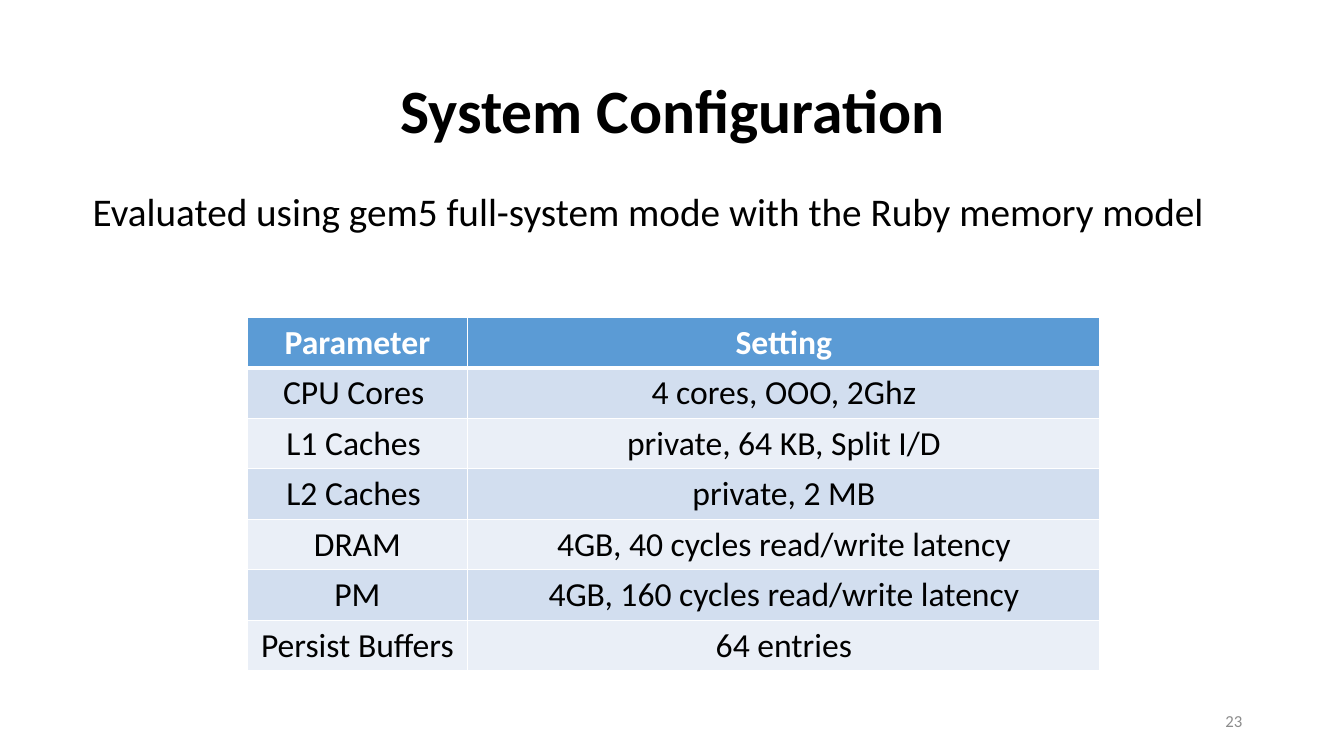
from dataclasses import dataclass

from lxml.etree import SubElement
from pptx import Presentation
from pptx.dml.color import RGBColor
from pptx.enum.text import MSO_ANCHOR, PP_ALIGN
from pptx.oxml.ns import qn
from pptx.util import Inches, Pt


@dataclass(frozen=True)
class Theme:
    font: str = "Calibri"
    ink: str = "000000"
    white: str = "FFFFFF"
    muted: str = "8C8C8C"
    head: str = "5B9BD5"
    bands: tuple = ("D2DEEF", "EAEFF7")
    title: int = 44
    body: int = 28
    table: int = 24
    small: int = 12
    thin: int = 1
    thick: int = 3


@dataclass(frozen=True)
class Box:
    left: float
    top: float
    width: float
    height: float

    def emu(self) -> tuple:
        return tuple(Inches(n) for n in (self.left, self.top, self.width, self.height))


@dataclass(frozen=True)
class Setting:
    name: str
    value: str


THEME = Theme()
HEADER = Setting("Parameter", "Setting")
SETTINGS = [
    Setting("CPU Cores ", "4 cores, OOO, 2Ghz"),
    Setting("L1 Caches ", "private, 64 KB, Split I/D"),
    Setting("L2 Caches ", "private, 2 MB"),
    Setting("DRAM", "4GB, 40 cycles read/write latency"),
    Setting("PM", "4GB, 160 cycles read/write latency"),
    Setting("Persist Buffers", "64 entries"),
]
COLUMNS = (2.19, 6.27)
ROW = 0.5


def write(frame, text: str, *, size: int, color: str = THEME.ink, bold: bool = False,
          align=PP_ALIGN.LEFT, spacing: float = 1.0) -> None:
    para = frame.paragraphs[0]
    para.alignment = align
    para.line_spacing = spacing
    run = para.add_run()
    run.text = text
    font = run.font
    font.name, font.size, font.bold = THEME.font, Pt(size), bold
    font.color.rgb = RGBColor.from_string(color)


def add_text(slide, box: Box, text: str, anchor=MSO_ANCHOR.MIDDLE, **style) -> None:
    frame = slide.shapes.add_textbox(*box.emu()).text_frame
    frame.word_wrap = True
    frame.vertical_anchor = anchor
    write(frame, text, **style)


def set_borders(cell, top: int, bottom: int) -> None:
    """Draw white cell borders; call before the fill so the XML order stays valid."""
    props = cell._tc.get_or_add_tcPr()
    widths = {"lnL": THEME.thin, "lnR": THEME.thin, "lnT": top, "lnB": bottom}
    for tag, width in widths.items():
        line = SubElement(props, qn(f"a:{tag}"), w=str(Pt(width)))
        fill = SubElement(line, qn("a:solidFill"))
        SubElement(fill, qn("a:srgbClr"), val=THEME.white)


def add_settings(slide, left: float, top: float) -> None:
    rows = [HEADER, *SETTINGS]
    box = Box(left, top, sum(COLUMNS), ROW * len(rows))
    table = slide.shapes.add_table(len(rows), len(COLUMNS), *box.emu()).table
    for column, width in zip(table.columns, COLUMNS):
        column.width = Inches(width)
    for i, row in enumerate(rows):
        head = i == 0
        shade = THEME.head if head else THEME.bands[(i - 1) % 2]
        for j, text in enumerate((row.name, row.value)):
            cell = table.cell(i, j)
            set_borders(cell, top=THEME.thick if i == 1 else THEME.thin,
                        bottom=THEME.thick if head else THEME.thin)
            cell.fill.solid()
            cell.fill.fore_color.rgb = RGBColor.from_string(shade)
            write(cell.text_frame, text, size=THEME.table, bold=head,
                  color=THEME.white if head else THEME.ink, align=PP_ALIGN.CENTER)


def main() -> None:
    deck = Presentation()
    deck.slide_width, deck.slide_height = Inches(13.33), Inches(7.5)
    slide = deck.slides.add_slide(deck.slide_layouts[6])
    add_text(slide, Box(0.92, 0.4, 11.5, 1.45), "System Configuration",
             size=THEME.title, bold=True, align=PP_ALIGN.CENTER, spacing=0.9)
    add_text(slide, Box(0.82, 1.86, 11.5, 4.76),
             "Evaluated using gem5 full-system mode with the Ruby memory model",
             anchor=MSO_ANCHOR.TOP, size=THEME.body, spacing=0.9)
    add_text(slide, Box(9.42, 6.95, 3, 0.4), "23",
             size=THEME.small, color=THEME.muted, align=PP_ALIGN.RIGHT)
    add_settings(slide, left=2.45, top=3.15)
    deck.save("out.pptx")


if __name__ == "__main__":
    main()
